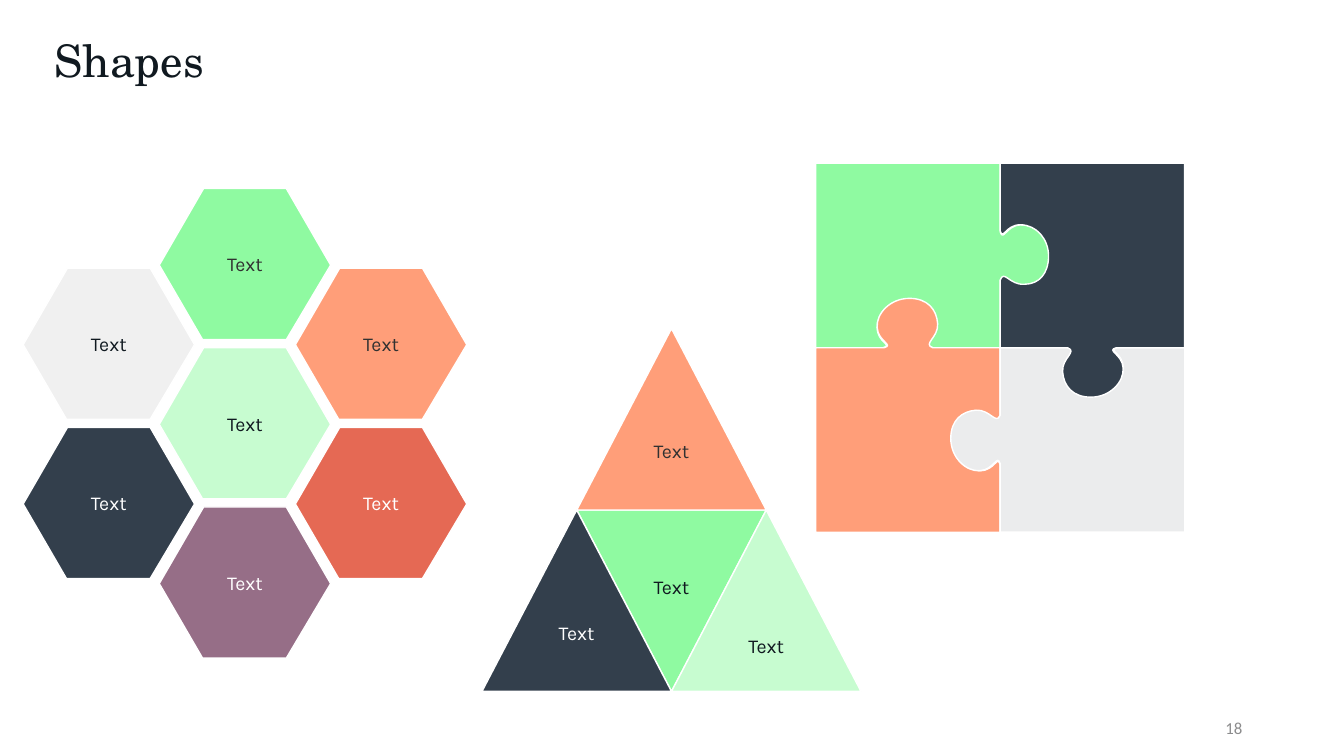
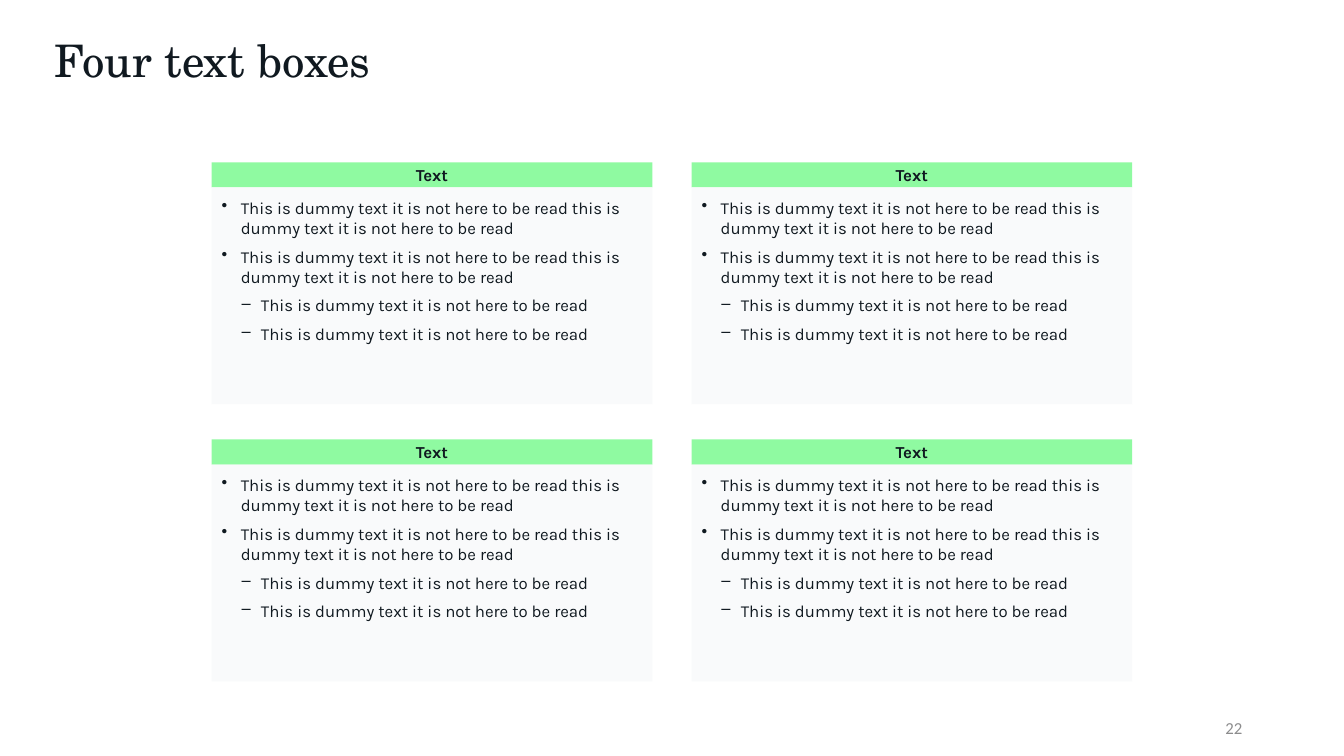
"""Build a slide of text-bearing shapes and a slide of four text panels."""

from itertools import product
from typing import NamedTuple

from pptx import Presentation
from pptx.dml.color import RGBColor
from pptx.enum.shapes import MSO_SHAPE
from pptx.enum.text import MSO_ANCHOR, PP_ALIGN
from pptx.oxml.ns import qn
from pptx.oxml.xmlchemy import OxmlElement
from pptx.shapes.autoshape import Shape
from pptx.shapes.shapetree import GroupShapes, SlideShapes
from pptx.slide import Slide
from pptx.util import Pt

EMU_PER_PX = 9144
RECTANGLE, TRIANGLE = MSO_SHAPE.RECTANGLE, MSO_SHAPE.ISOSCELES_TRIANGLE
TOP, MIDDLE = MSO_ANCHOR.TOP, MSO_ANCHOR.MIDDLE
LEFT, CENTER, RIGHT = PP_ALIGN.LEFT, PP_ALIGN.CENTER, PP_ALIGN.RIGHT

TITLE_FONT, BODY_FONT, NUMBER_FONT = "TeX Gyre Schola", "Karla", "Calibri"
WHITE, INK, CHARCOAL, GRAY = "FFFFFF", "101920", "313131", "8C8C8D"
GREEN, MINT, ORANGE, RED = "8FFAA1", "C7FCD0", "FF9E79", "E56954"
SLATE, PLUM, MIST, SILVER, PALE = "333F4C", "966E87", "F0F0F0", "EBECED", "F9FAFB"

Trees = SlideShapes | GroupShapes
Points = list[tuple[int, ...]]


class Tile(NamedTuple):
    """A labelled shape at a column and row of its pattern."""

    column: int
    row: int
    fill: str
    ink: str
    bottom_inset: int = 4


class Bullet(NamedTuple):
    """One list item with its marker and indents."""

    text: str
    level: int
    marker: str
    margin: int
    hanging: int


class Piece(NamedTuple):
    """A puzzle piece, turned clockwise by quarter turns."""

    turns: int
    fill: str


HEXAGON: Points = [(44, 0), (126, 0), (170, 76), (126, 150), (43, 150), (0, 76)]
HEXAGONS = [
    Tile(0, 1, MIST, INK),
    Tile(1, 0, GREEN, CHARCOAL),
    Tile(2, 1, ORANGE, CHARCOAL),
    Tile(1, 2, MINT, INK),
    Tile(0, 3, SLATE, WHITE),
    Tile(2, 3, RED, WHITE),
    Tile(1, 4, PLUM, WHITE),
]

TRIANGLE_LEFT, TRIANGLE_TOP = 478, 326
TRIANGLE_WIDTH, TRIANGLE_HEIGHT = 188, 180
TRIANGLES = [
    Tile(1, 0, ORANGE, CHARCOAL, 31),
    Tile(2, 1, MINT, INK),
    Tile(0, 1, SLATE, WHITE, 31),
]

PUZZLE_CENTER = (992, 345)
PUZZLE_OUTLINE: Points = [
    (-183, -183),
    (0, -183),
    (0, -115),
    (3, -105, 6, -121, 20, -122),
    (34, -123, 49, -109, 49, -90),
    (49, -72, 38, -63, 24, -62),
    (10, -61, 4, -77, 0, -67),
    (0, 0),
    (-67, 0),
    (-78, -4, -62, -9, -63, -24),
    (-63, -39, -74, -48, -91, -48),
    (-108, -48, -122, -36, -122, -20),
    (-122, -5, -106, -3, -116, 0),
    (-183, 0),
]
PIECES = [Piece(0, GREEN), Piece(3, ORANGE), Piece(2, SILVER), Piece(1, SLATE)]

SENTENCE = "This is dummy text it is not here to be read"
BULLETS = [
    *[Bullet(f"{SENTENCE} {SENTENCE.lower()}", 0, "•", 19, 19)] * 2,
    *[Bullet(SENTENCE, 1, "‒", 39, 20)] * 2,
]


def px(length: int) -> int:
    """Turn px into EMU."""
    return length * EMU_PER_PX


def color(value: str) -> RGBColor:
    """Turn a hex string into a colour."""
    return RGBColor.from_string(value)


def paint(shape: Shape, fill: str, line: str | None = None) -> Shape:
    """Give a shape a flat fill and an optional thin outline."""
    shape.shadow.inherit = False
    shape.fill.solid()
    shape.fill.fore_color.rgb = color(fill)
    if line:
        shape.line.color.rgb = color(line)
        shape.line.width = Pt(1)
    else:
        shape.line.fill.background()
    return shape


def write(
    shape: Shape,
    text: str,
    *,
    size: int,
    ink: str = INK,
    font: str = BODY_FONT,
    bold: bool = False,
    align: PP_ALIGN = CENTER,
    anchor: MSO_ANCHOR = MIDDLE,
    insets: tuple[int, int, int, int] = (4, 4, 4, 4),
    space_after: int = 0,
) -> None:
    """Write text, one paragraph a line, in one format."""
    frame = shape.text_frame
    frame.word_wrap = True
    frame.vertical_anchor = anchor
    (frame.margin_left, frame.margin_top,
     frame.margin_right, frame.margin_bottom) = map(px, insets)
    frame.text = text
    for para in frame.paragraphs:
        para.alignment = align
        para.space_after = Pt(space_after)
        for span in para.runs:
            span.font.name = font
            span.font.size = Pt(size)
            span.font.bold = bold
            span.font.color.rgb = color(ink)


def add_box(shapes: Trees, kind: MSO_SHAPE, left: int, top: int,
            width: int, height: int) -> Shape:
    """Add a preset shape placed in px."""
    return shapes.add_shape(kind, px(left), px(top), px(width), px(height))


def add_outline(shapes: Trees, steps: Points, left: int = 0, top: int = 0) -> Shape:
    """Add a closed outline of points and of cubic curves given as six numbers."""
    points = [(left + step[i], top + step[i + 1])
              for step in steps for i in range(0, len(step), 2)]
    builder = shapes.build_freeform(*points[0], scale=EMU_PER_PX)
    builder.add_line_segments(points[1:], close=True)
    shape = builder.convert_to_shape()
    outline = shape.element.find(".//" + qn("a:path"))
    segments = iter(outline.findall(qn("a:lnTo")))
    for step in steps[1:]:
        parts = [next(segments) for _ in range(len(step) // 2)]
        if len(parts) == 3:
            curve = OxmlElement("a:cubicBezTo")
            parts[0].addprevious(curve)
            for part in parts:
                curve.append(part[0])
                outline.remove(part)
    return shape


def turn(step: tuple[int, ...], turns: int) -> tuple[int, ...]:
    """Turn each point of a step clockwise about the origin."""
    for _ in range(turns):
        step = tuple(value for i in range(0, len(step), 2)
                     for value in (-step[i + 1], step[i]))
    return step


def add_page(deck: Presentation, title: str, number: str) -> Slide:
    """Add a blank page with its title and page number."""
    page = deck.slides.add_slide(deck.slide_layouts[6])
    heading = page.shapes.add_textbox(px(54), px(32), px(1010), px(51))
    write(heading, title, size=32, font=TITLE_FONT, align=LEFT, anchor=TOP,
          insets=(0, 0, 0, 0))
    footer = page.shapes.add_textbox(px(942), px(702), px(300), px(40))
    write(footer, number, size=12, ink=GRAY, font=NUMBER_FONT, align=RIGHT,
          insets=(10, 5, 10, 5))
    return page


def label(shape: Shape, tile: Tile) -> None:
    """Paint and label a tile."""
    paint(shape, tile.fill, WHITE)
    write(shape, "Text", size=14, ink=tile.ink, insets=(4, 4, 4, tile.bottom_inset))


def draw_hexagons(page: Slide) -> None:
    """Draw the honeycomb."""
    for tile in HEXAGONS:
        left, top = 23 + 135 * tile.column, 187 + 79 * tile.row
        label(add_outline(page.shapes, HEXAGON, left, top), tile)


def draw_triangles(page: Slide) -> None:
    """Draw the pyramid of three upright triangles and one inverted."""
    half = TRIANGLE_WIDTH // 2
    inverted: Points = [(0, 0), (TRIANGLE_WIDTH, 0), (half, TRIANGLE_HEIGHT)]
    core = add_outline(page.shapes, inverted, TRIANGLE_LEFT + half,
                       TRIANGLE_TOP + TRIANGLE_HEIGHT)
    label(core, Tile(1, 1, GREEN, INK, 31))
    for tile in TRIANGLES:
        box = add_box(page.shapes, TRIANGLE, TRIANGLE_LEFT + half * tile.column,
                      TRIANGLE_TOP + TRIANGLE_HEIGHT * tile.row,
                      TRIANGLE_WIDTH, TRIANGLE_HEIGHT)
        label(box, tile)


def draw_puzzle(page: Slide) -> None:
    """Draw four interlocking pieces around their shared corner."""
    group = page.shapes.add_group_shape()
    for piece in PIECES:
        steps = [turn(step, piece.turns) for step in PUZZLE_OUTLINE]
        paint(add_outline(group.shapes, steps, *PUZZLE_CENTER), piece.fill, WHITE)


def draw_panel(page: Slide, left: int, top: int) -> None:
    """Draw a headed panel with a bulleted list."""
    shapes = page.shapes.add_group_shape().shapes
    header = paint(add_box(shapes, RECTANGLE, left, top, 437, 25), GREEN)
    write(header, "Text", size=12, bold=True)
    body = paint(add_box(shapes, RECTANGLE, left, top + 25, 437, 215), PALE)
    write(body, "\n".join(bullet.text for bullet in BULLETS), size=12, align=LEFT,
          anchor=TOP, insets=(10, 10, 10, 10), space_after=6)
    for para, bullet in zip(body.text_frame.paragraphs, BULLETS):
        para.level = bullet.level
        properties = para._p.get_or_add_pPr()
        properties.set("marL", str(px(bullet.margin)))
        properties.set("indent", str(-px(bullet.hanging)))
        marker = OxmlElement("a:buChar")
        marker.set("char", bullet.marker)
        properties.append(marker)


def main() -> None:
    """Build and save the deck."""
    deck = Presentation()
    deck.slide_width, deck.slide_height = px(1333), px(750)
    shapes_page = add_page(deck, "Shapes", "18")
    draw_hexagons(shapes_page)
    draw_triangles(shapes_page)
    draw_puzzle(shapes_page)
    panels_page = add_page(deck, "Four text boxes", "22")
    for top, left in product((161, 436), (210, 686)):
        draw_panel(panels_page, left, top)
    deck.save("out.pptx")


if __name__ == "__main__":
    main()
